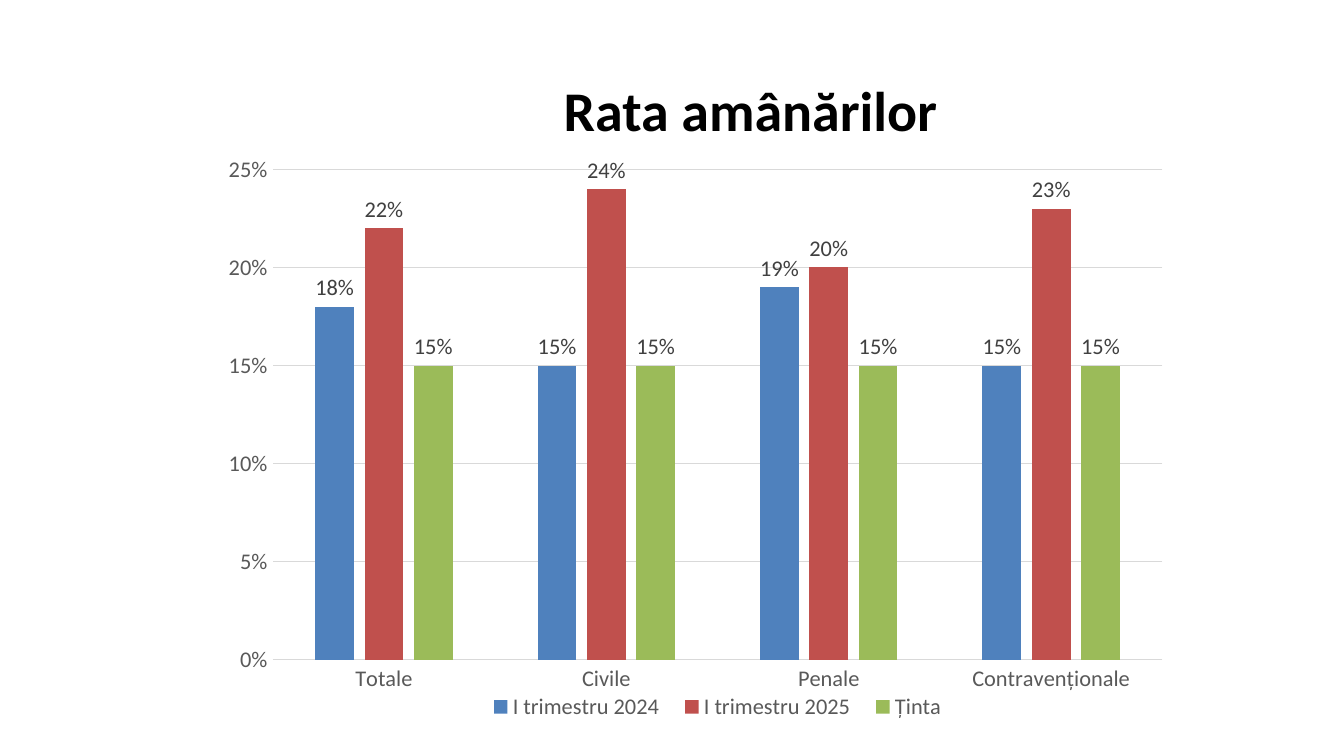
import pptx
import pptx.chart.data
import pptx.dml.color
import pptx.enum.chart
import pptx.enum.text
import pptx.oxml
import pptx.oxml.ns
import pptx.util
from pptx.util import Inches

TITLE = "Rata amânărilor"
CATEGORIES = ["Totale", "Civile", "Penale", "Contravenționale"]
SERIES = [
    ("I trimestru 2024", "blue", [0.18, 0.15, 0.19, 0.15]),
    ("I trimestru 2025", "red", [0.22, 0.24, 0.20, 0.23]),
    ("Ținta", "green", [0.15] * 4),
]
COLORS = {
    "blue": "4F81BD", "red": "C0504D", "green": "9BBB59", "title": "000000",
    "axis": "595959", "label": "404040", "grid": "D9D9D9",
}
FONT = "Calibri"
PERCENT = "0%"

# Left, top, width, height in inches; plot and legend lie inside the chart
SLIDE_WIDTH = 10
SLIDE_HEIGHT = SLIDE_WIDTH * 9 / 16
TITLE_BOX = (1.58, 0.59, 8.01, 0.45)
CHART_BOX = (1.48, 0.92, 7.42, 4.57)
PLOT_BOX = (0.55, 0.34, 6.62, 3.65)
LEGEND_BOX = (2.06, 4.2, 3.6, 0.28)


def rgb(name):
    return pptx.dml.color.RGBColor.from_string(COLORS[name])


def style_font(font, size, color, bold=False):
    font.name = FONT
    font.size = pptx.util.Pt(size)
    font.bold = bold
    font.color.rgb = rgb(color)


def style_line(line, color):
    line.color.rgb = rgb(color)
    line.width = pptx.util.Pt(0.75)


def add_text(slide, text, box, size, color, bold=False):
    frame = slide.shapes.add_textbox(*map(Inches, box)).text_frame
    frame.word_wrap = True
    frame.vertical_anchor = pptx.enum.text.MSO_ANCHOR.MIDDLE
    paragraph = frame.paragraphs[0]
    paragraph.alignment = pptx.enum.text.PP_ALIGN.CENTER
    run = paragraph.add_run()
    run.text = text
    style_font(run.font, size, color, bold)


def set_layout(element, index, box, target=""):
    """Place a chart part by hand, as fractions of the chart size."""
    chart_size = CHART_BOX[2:] * 2
    modes = "".join(f'<c:{key}Mode val="edge"/>' for key in "xy")
    sizes = "".join(f'<c:{key} val="{length / whole:.4f}"/>'
                    for key, length, whole in zip("xywh", box, chart_size))
    layout = pptx.oxml.parse_xml(
        f'<c:layout {pptx.oxml.ns.nsdecls("c")}><c:manualLayout>'
        f'{target}{modes}{sizes}</c:manualLayout></c:layout>')
    for old_layout in element.findall(pptx.oxml.ns.qn("c:layout")):
        element.remove(old_layout)
    element.insert(index, layout)


def add_rate_chart(slide):
    data = pptx.chart.data.CategoryChartData(number_format=PERCENT)
    data.categories = CATEGORIES
    for name, _, values in SERIES:
        data.add_series(name, values)
    chart = slide.shapes.add_chart(
        pptx.enum.chart.XL_CHART_TYPE.COLUMN_CLUSTERED,
        *map(Inches, CHART_BOX), data).chart
    chart.has_title = False
    style_font(chart.font, 10, "title")
    chart_element = chart._chartSpace.chart
    set_layout(chart_element.plotArea, 0, PLOT_BOX, '<c:layoutTarget val="inner"/>')

    # Columns and their labels
    plot = chart.plots[0]
    plot.gap_width = 219
    plot.overlap = -27
    plot.vary_by_categories = False
    for series, (_, color, _) in zip(plot.series, SERIES):
        series.format.fill.solid()
        series.format.fill.fore_color.rgb = rgb(color)
        series.invert_if_negative = False
        labels = series.data_labels
        labels.show_value = True
        labels.position = pptx.enum.chart.XL_LABEL_POSITION.OUTSIDE_END
        labels.number_format = PERCENT
        labels.number_format_is_linked = False
        style_font(labels.font, 12, "label")

    # Axes
    for axis in (chart.category_axis, chart.value_axis):
        axis.major_tick_mark = pptx.enum.chart.XL_TICK_MARK.NONE
        axis.minor_tick_mark = pptx.enum.chart.XL_TICK_MARK.NONE
        style_font(axis.tick_labels.font, 12, "axis")
    style_line(chart.category_axis.format.line, "grid")
    value_axis = chart.value_axis
    value_axis.minimum_scale = 0
    value_axis.maximum_scale = 0.25
    value_axis.major_unit = 0.05
    value_axis.format.line.fill.background()
    value_axis.has_major_gridlines = True
    style_line(value_axis.major_gridlines.format.line, "grid")
    value_axis.tick_labels.number_format = PERCENT
    value_axis.tick_labels.number_format_is_linked = False

    # Legend
    chart.has_legend = True
    chart.legend.position = pptx.enum.chart.XL_LEGEND_POSITION.BOTTOM
    chart.legend.include_in_layout = False
    style_font(chart.legend.font, 12, "axis")
    set_layout(chart_element.find(pptx.oxml.ns.qn("c:legend")), 1, LEGEND_BOX)


def main():
    presentation = pptx.Presentation()
    presentation.slide_width = Inches(SLIDE_WIDTH)
    presentation.slide_height = Inches(SLIDE_HEIGHT)
    slide = presentation.slides.add_slide(presentation.slide_layouts[6])
    add_text(slide, TITLE, TITLE_BOX, size=30, color="title", bold=True)
    add_rate_chart(slide)
    presentation.save("out.pptx")


if __name__ == "__main__":
    main()
